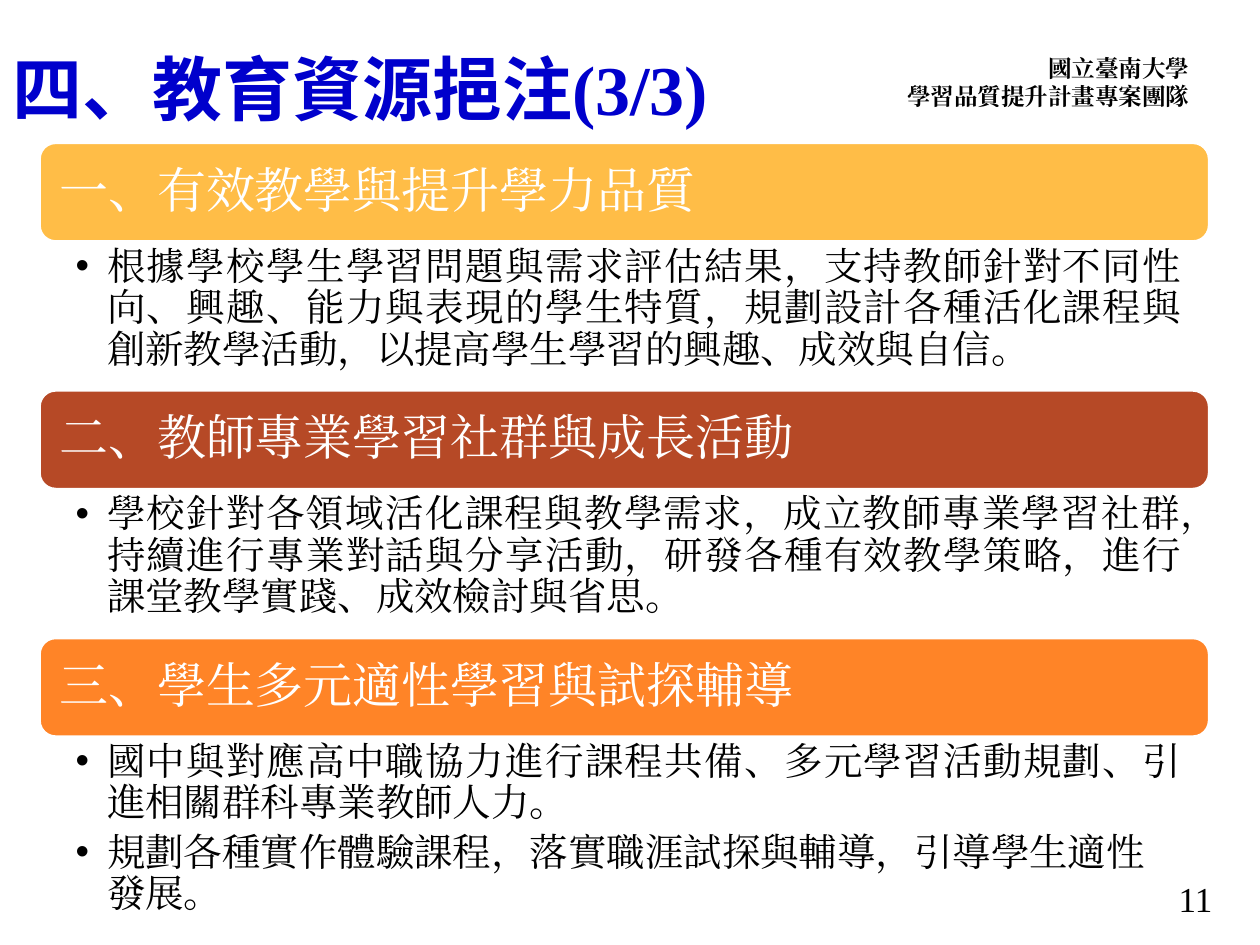
from dataclasses import dataclass
from lxml.etree import SubElement
from pptx import Presentation
from pptx.dml.color import RGBColor
from pptx.enum.shapes import MSO_SHAPE
from pptx.enum.text import MSO_ANCHOR, MSO_AUTO_SIZE, PP_ALIGN
from pptx.oxml.ns import qn
from pptx.util import Inches, Pt


@dataclass(frozen=True)
class Theme:
    blue: str = "0000CC"
    black: str = "000000"
    white: str = "FFFFFF"
    bands: tuple = ("FFBD47", "B64926", "FF8427")
    serif: str = "Times New Roman"
    sans: str = "Noto Sans CJK SC"
    title: float = 40
    heading: float = 28
    body: float = 22
    number: float = 20
    credit: float = 13.5


T = Theme()

# Column and rows shared by the sections
LEFT, WIDTH = 0.31, 9.29
TOP, ROW, BAND = 1.13, 1.965, 0.79
INSET = 0.04

SECTIONS = [
    ("一、有效教學與提升學力品質", 1.17,
     ["根據學校學生學習問題與需求評估結果，支持教師針對不同性向、興趣、能力與表現的學生特質，"
      "規劃設計各種活化課程與創新教學活動，以提高學生學習的興趣、成效與自信。"]),
    ("二、教師專業學習社群與成長活動", 1.17,
     ["學校針對各領域活化課程與教學需求，成立教師專業學習社群，持續進行專業對話與分享活動，"
      "研發各種有效教學策略，進行課堂教學實踐、成效檢討與省思。"]),
    ("三、學生多元適性學習與試探輔導", 1.62,
     ["國中與對應高中職協力進行課程共備、多元學習活動規劃、引進相關群科專業教師人力。",
      "規劃各種實作體驗課程，落實職涯試探與輔導，引導學生適性發展。"]),
]


def apply(obj, **values):
    for name, value in values.items():
        setattr(obj, name, value)


def place(sp, x, y, w, h):
    apply(sp, left=Inches(x), top=Inches(y), width=Inches(w), height=Inches(h))


def frame(sp, anchor=MSO_ANCHOR.TOP, insets=(0.1, 0.05, 0.1, 0.05)):
    tf = sp.text_frame
    sides = ("margin_left", "margin_top", "margin_right", "margin_bottom")
    apply(tf, word_wrap=True, auto_size=MSO_AUTO_SIZE.NONE, vertical_anchor=anchor,
          **{side: Inches(v) for side, v in zip(sides, insets)})
    return tf


def style(r, size, color, font=T.serif, bold=False):
    apply(r.font, size=Pt(size), bold=bold, name=font)
    r.font.color.rgb = RGBColor.from_string(color)
    SubElement(r.font._element, qn("a:ea"), typeface=font)


def write(p, text, size, color, bold=False, **layout):
    p.text = text
    apply(p, **layout)
    for r in p.runs:
        style(r, size, color, bold=bold)


def add_text(s, box, text, size, color, bold=False, anchor=MSO_ANCHOR.TOP,
             insets=(0.1, 0.05, 0.1, 0.05), **layout):
    sp = s.shapes.add_textbox(*map(Inches, box))
    write(frame(sp, anchor, insets).paragraphs[0], text, size, color, bold, **layout)


def fill_title(sp):
    place(sp, 0, 0.01, 10, 1.45)
    p = frame(sp, MSO_ANCHOR.MIDDLE).paragraphs[0]
    apply(p, alignment=PP_ALIGN.LEFT, line_spacing=0.9)
    for text, font in (("四、教育資源挹注", T.sans), ("(3/3)", T.serif)):
        r = p.add_run()
        r.text = text
        style(r, T.title, T.blue, font, bold=True)


def add_band(s, y, color, heading):
    sp = s.shapes.add_shape(MSO_SHAPE.ROUNDED_RECTANGLE,
                            *map(Inches, (LEFT, y, WIDTH, BAND)))
    sp.shadow.inherit = False
    sp.fill.solid()
    sp.fill.fore_color.rgb = RGBColor.from_string(color)
    sp.line.color.rgb = RGBColor.from_string(T.white)
    sp.line.width = Pt(2)
    box = (LEFT + INSET, y + INSET, WIDTH - 2 * INSET, BAND - 2 * INSET)
    add_text(s, box, heading, T.heading, T.white, anchor=MSO_ANCHOR.MIDDLE,
             insets=(0.12,) * 4, alignment=PP_ALIGN.JUSTIFY, line_spacing=0.9)


def fill_list(sp, y, height, items):
    place(sp, LEFT, y, WIDTH, height)
    tf = frame(sp, insets=(0.29, 0.04, 0.22, 0.04))
    for i, item in enumerate(items):
        p = tf.add_paragraph() if i else tf.paragraphs[0]
        write(p, item, T.body, T.black, level=1, line_spacing=0.9,
              alignment=PP_ALIGN.LEFT if i else PP_ALIGN.JUSTIFY,
              space_before=Pt(0), space_after=Pt(0.2 * T.body))
        # Hanging bullet
        pPr = p._p.get_or_add_pPr()
        pPr.set("marL", str(Inches(0.25)))
        pPr.set("indent", str(-Inches(0.25)))
        SubElement(pPr, qn("a:buChar"), char="•")


def main():
    prs = Presentation()
    apply(prs, slide_width=Inches(10), slide_height=Inches(7.5))
    s = prs.slides.add_slide(prs.slide_layouts.get_by_name("Comparison"))
    title, *bodies = s.placeholders
    fill_title(title)

    # Three sections: coloured band above its list
    for i, (heading, height, items) in enumerate(SECTIONS):
        y = TOP + i * ROW
        add_band(s, y, T.bands[i], heading)
        fill_list(bodies[i], y + BAND, height, items)
    for sp in bodies[len(SECTIONS):]:
        sp._element.getparent().remove(sp._element)

    # Team name and page number
    add_text(s, (6.74, 0.38, 2.8, 0.56), "國立臺南大學\v學習品質提升計畫專案團隊",
             T.credit, T.black, bold=True, alignment=PP_ALIGN.RIGHT)
    add_text(s, (7.47, 6.93, 2.25, 0.4), "11", T.number, T.black,
             anchor=MSO_ANCHOR.MIDDLE, alignment=PP_ALIGN.RIGHT)
    prs.save("out.pptx")


if __name__ == "__main__":
    main()
